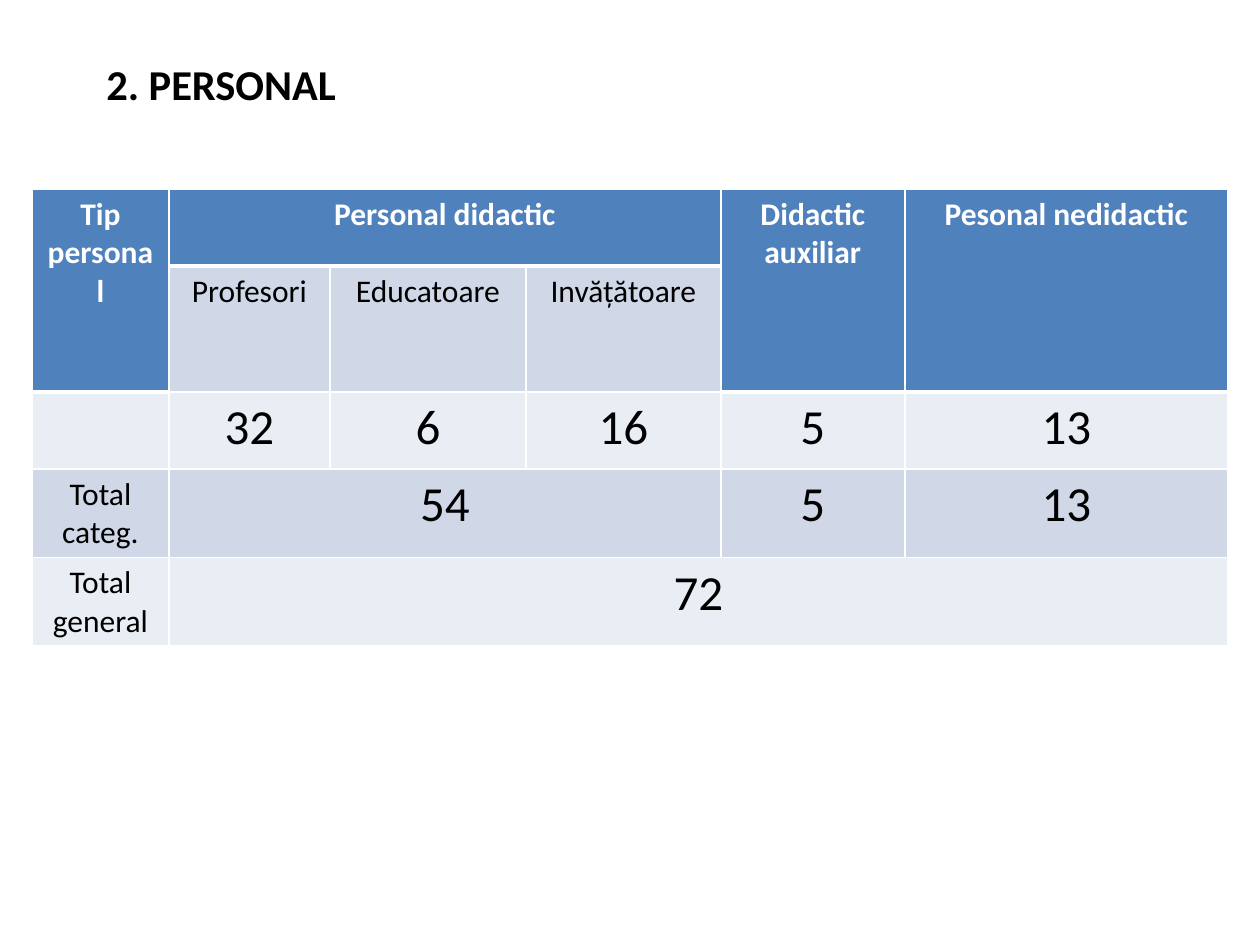
"""Build the staff slide: a title over a table of staff by type."""
from lxml.etree import SubElement as Sub
from pptx import Presentation
from pptx.dml.color import RGBColor as RGB
from pptx.enum.text import MSO_ANCHOR as Anchor, PP_ALIGN as Align
from pptx.oxml.ns import qn
from pptx.util import Pt

PX = 914400 // 126
HEX = {"head": "4F81BD", "dark": "D0D8E8", "light": "E9EDF4",
       "white": "FFFFFF", "black": "000000"}
TITLE = "2. PERSONAL"
ROWS = [
    ["Tip personal", "Personal didactic", "", "", "Didactic auxiliar", "Pesonal nedidactic"],
    ["", "Profesori", "Educatoare", "Invățătoare", "", ""],
    ["", "32", "6", "16", "5", "13"],
    ["Total categ.", "54", "", "", "5", "13"],
    ["Total general", "72", "", "", "", ""],
]
SPANS = [(0, 0, 1, 0), (0, 1, 0, 3), (0, 4, 1, 4), (0, 5, 1, 5), (3, 1, 3, 3), (4, 1, 4, 5)]
WIDTHS = [137, 161, 196, 195, 184, 323]
ROW_H = 77
LEFT, TOP = 32, 189


def write(frame, text, size=18, color="black", bold=False, align=Align.CENTER):
    para = frame.paragraphs[0]
    para.alignment = align
    run = para.add_run()
    run.text = text
    font = run.font
    font.name, font.size, font.bold = "Calibri", Pt(size), bold
    font.color.rgb = RGB.from_string(HEX[color])


def edge(cell, **widths):
    props = cell._tc.get_or_add_tcPr()
    for spot, side in enumerate("LRTB"):
        line = Sub(props, qn(f"a:ln{side}"), w=str(Pt(widths.get(side, 1))))
        fill = Sub(line, qn("a:solidFill"))
        Sub(fill, qn("a:srgbClr"), val=HEX["white"])
        props.insert(spot, line)


def is_head(row, col):
    return row == 0 or row == 1 and col in (0, 4, 5)


def add_title(slide):
    box = slide.shapes.add_textbox(94 * PX, 52 * PX, 1071 * PX, 63 * PX)
    frame = box.text_frame
    frame.word_wrap = True
    frame.vertical_anchor = Anchor.MIDDLE
    write(frame, TITLE, size=24.3, bold=True, align=Align.LEFT)


def add_staff(slide):
    table = slide.shapes.add_table(
        len(ROWS), len(WIDTHS), LEFT * PX, TOP * PX,
        sum(WIDTHS) * PX, len(ROWS) * ROW_H * PX).table
    for col, width in zip(table.columns, WIDTHS):
        col.width = width * PX
    for row in table.rows:
        row.height = ROW_H * PX
    for top, left, low, right in SPANS:
        table.cell(top, left).merge(table.cell(low, right))
    for r, row in enumerate(ROWS):
        for c, text in enumerate(row):
            cell, head = table.cell(r, c), is_head(r, c)
            tone = "head" if head else "dark" if r % 2 else "light"
            cell.fill.solid()
            cell.fill.fore_color.rgb = RGB.from_string(HEX[tone])
            edge(cell, T=3 if r and is_head(r - 1, c) else 1, B=3 if head else 1)
            if text:
                write(cell.text_frame, text, size=28 if text.isdigit() else 18,
                      color="white" if head else "black", bold=head)


def main():
    deck = Presentation()
    deck.slide_width, deck.slide_height = 1260 * PX, 945 * PX
    slide = deck.slides.add_slide(deck.slide_layouts[6])
    add_title(slide)
    add_staff(slide)
    deck.save("out.pptx")


if __name__ == "__main__":
    main()
